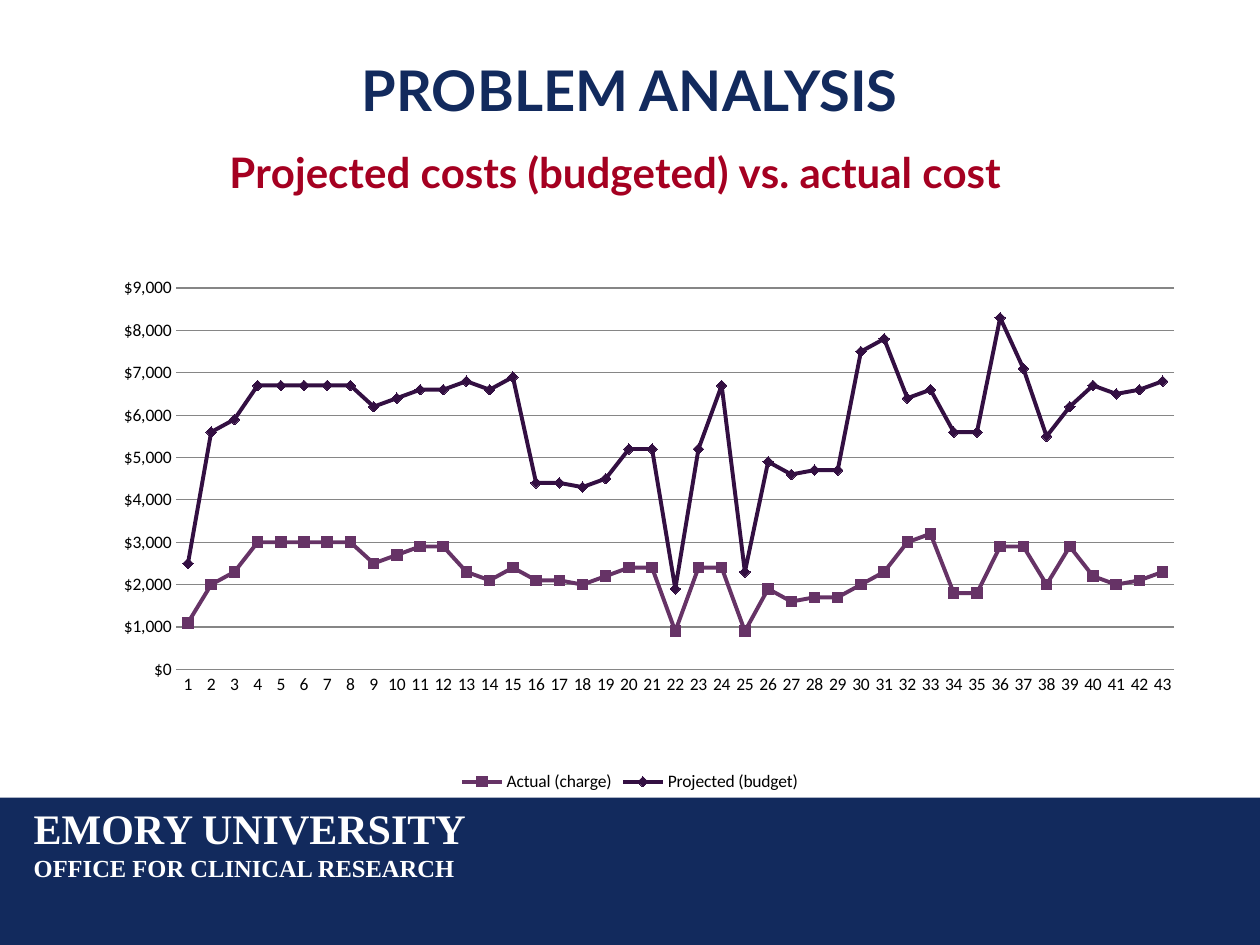
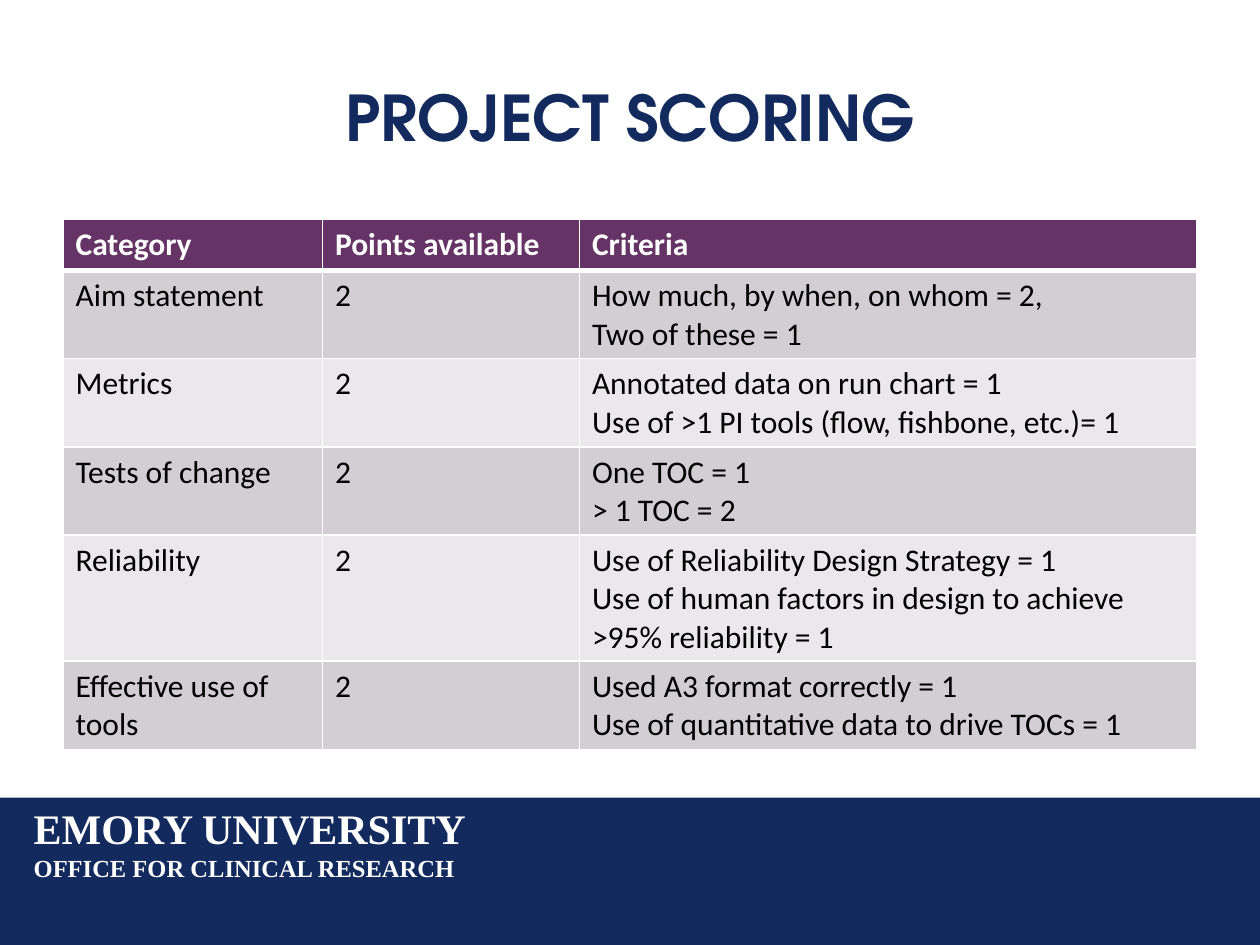
import dataclasses

import lxml.etree
import pptx
import pptx.chart.data
import pptx.dml.color
import pptx.enum.chart
import pptx.enum.shapes
import pptx.enum.text
import pptx.oxml
import pptx.oxml.ns
import pptx.util

Cm = pptx.util.Cm
Pt = pptx.util.Pt
RGB = pptx.dml.color.RGBColor.from_string
qn = pptx.oxml.ns.qn


@dataclasses.dataclass(frozen=True)
class Theme:
    navy: str = "122A5D"
    crimson: str = "A50021"
    plum: str = "663366"
    aubergine: str = "330F42"
    grid: str = "868686"
    white: str = "FFFFFF"
    black: str = "000000"
    bands: tuple = ("D3CED3", "EAE8EA")
    heading_font: str = "Lato"
    scoring_font: str = "TeX Gyre Adventor"
    body_font: str = "Calibri"
    footer_font: str = "Times New Roman"
    analysis_size: int = 32
    scoring_size: int = 36
    subtitle_size: int = 24
    office_sizes: tuple = (24, 14)
    table_size: int = 18
    chart_size: int = 10


theme = Theme()


def write(frame, lines, font, sizes, color, bold=False, align=None):
    frame.word_wrap = True
    for index, (line, size) in enumerate(zip(lines, sizes)):
        paragraph = frame.paragraphs[0] if index == 0 else frame.add_paragraph()
        paragraph.alignment = align
        run = paragraph.add_run()
        run.text = line
        run.font.name = font
        run.font.size = Pt(size)
        run.font.bold = bold
        run.font.color.rgb = RGB(color)


def place(parent, position, **fractions):
    for old in parent.findall(qn("c:layout")):
        parent.remove(old)
    layout = lxml.etree.Element(qn("c:layout"))
    manual = lxml.etree.SubElement(layout, qn("c:manualLayout"))
    if "w" in fractions:
        lxml.etree.SubElement(manual, qn("c:layoutTarget")).set("val", "inner")
    for side in ("x", "y"):
        lxml.etree.SubElement(manual, qn(f"c:{side}Mode")).set("val", "edge")
    for side, fraction in fractions.items():
        lxml.etree.SubElement(manual, qn(f"c:{side}")).set("val", str(fraction))
    parent.insert(position, layout)


deck = pptx.Presentation()
deck.slide_width, deck.slide_height = Cm(25.4), Cm(19.05)
margin, content_width = Cm(1.27), Cm(22.86)
band_top = Cm(16.08)

headings = [
    ("PROBLEM ANALYSIS", theme.heading_font, theme.analysis_size, Cm(2.08)),
    ("PROJECT SCORING", theme.scoring_font, theme.scoring_size, Cm(3.18)),
]
for heading, heading_font, heading_size, heading_height in headings:
    slide = deck.slides.add_slide(deck.slide_layouts[6])
    band = slide.shapes.add_shape(
        pptx.enum.shapes.MSO_SHAPE.RECTANGLE,
        0, band_top, deck.slide_width, deck.slide_height - band_top)
    band.shadow.inherit = False
    band.fill.solid()
    band.fill.fore_color.rgb = RGB(theme.navy)
    band.line.fill.background()

    title = slide.shapes.add_textbox(margin, Cm(0.76), content_width, heading_height)
    title.text_frame.vertical_anchor = pptx.enum.text.MSO_ANCHOR.MIDDLE
    write(title.text_frame, [heading], heading_font, [heading_size], theme.navy,
          True, pptx.enum.text.PP_ALIGN.CENTER)

    office = slide.shapes.add_textbox(Cm(0.43), Cm(16.05), Cm(10.03), Cm(1.88))
    office.text_frame.vertical_anchor = pptx.enum.text.MSO_ANCHOR.MIDDLE
    write(office.text_frame, ["EMORY UNIVERSITY", "OFFICE FOR CLINICAL RESEARCH"],
          theme.footer_font, theme.office_sizes, theme.white, True)

analysis, scoring = deck.slides

actual = [
    1100, 2000, 2300, 3000, 3000, 3000, 3000, 3000, 2500, 2700, 2900,
    2900, 2300, 2100, 2400, 2100, 2100, 2000, 2200, 2400, 2400, 900,
    2400, 2400, 900, 1900, 1600, 1700, 1700, 2000, 2300, 3000, 3200,
    1800, 1800, 2900, 2900, 2000, 2900, 2200, 2000, 2100, 2300,
]
projected = [
    1400, 3600, 3600, 3700, 3700, 3700, 3700, 3700, 3700, 3700, 3700,
    3700, 4500, 4500, 4500, 2300, 2300, 2300, 2300, 2800, 2800, 1000,
    2800, 4300, 1400, 3000, 3000, 3000, 3000, 5500, 5500, 3400, 3400,
    3800, 3800, 5400, 4200, 3500, 3300, 4500, 4500, 4500, 4500,
]
costs = pptx.chart.data.CategoryChartData()
costs.categories = [str(number) for number in range(1, len(actual) + 1)]
costs.add_series("Actual (charge)", actual)
costs.add_series("Projected (budget)", projected)
cost_chart = analysis.shapes.add_chart(
    pptx.enum.chart.XL_CHART_TYPE.LINE_MARKERS_STACKED,
    margin, Cm(2.57), content_width, Cm(13.49), costs).chart
cost_chart.font.name = theme.body_font
cost_chart.font.size = Pt(theme.chart_size)
cost_chart.font.color.rgb = RGB(theme.black)

cost_chart.has_title = True
write(cost_chart.chart_title.text_frame, ["Projected costs (budgeted) vs. actual cost"],
      theme.heading_font, [theme.subtitle_size], theme.crimson, True)
cost_chart.chart_title.include_in_layout = False
place(cost_chart.chart_title._element, 1, x=0.14, y=0.01)
place(cost_chart._chartSpace.chart.plotArea, 0, x=0.1, y=0.24, w=0.88, h=0.57)

cost_chart.has_legend = True
cost_chart.legend.position = pptx.enum.chart.XL_LEGEND_POSITION.BOTTOM
cost_chart.legend.include_in_layout = False

for axis in (cost_chart.category_axis, cost_chart.value_axis):
    axis.major_tick_mark = pptx.enum.chart.XL_TICK_MARK.NONE
    axis.minor_tick_mark = pptx.enum.chart.XL_TICK_MARK.NONE
cost_chart.category_axis.format.line.color.rgb = RGB(theme.grid)
dollars = cost_chart.value_axis
dollars.minimum_scale, dollars.maximum_scale, dollars.major_unit = 0, 9000, 1000
dollars.format.line.fill.background()
dollars.has_major_gridlines = True
dollars.major_gridlines.format.line.color.rgb = RGB(theme.grid)
dollars.tick_labels.number_format = '"$"#,##0'
dollars.tick_labels.number_format_is_linked = False

markers = pptx.enum.chart.XL_MARKER_STYLE
series_looks = [(theme.plum, markers.SQUARE), (theme.aubergine, markers.DIAMOND)]
for cost, (color, marker) in zip(cost_chart.plots[0].series, series_looks):
    cost.smooth = False
    cost.format.line.color.rgb = RGB(color)
    cost.format.line.width = Pt(2.25)
    cost.marker.style = marker
    cost.marker.size = 6
    cost.marker.format.fill.solid()
    cost.marker.format.fill.fore_color.rgb = RGB(color)
    cost.marker.format.line.color.rgb = RGB(color)
cost_chart.plots[0].vary_by_categories = False

criteria = [
    ("Category", "Points available", ["Criteria"]),
    ("Aim statement", "2", ["How much, by when, on whom = 2,", "Two of these = 1"]),
    ("Metrics", "2", ["Annotated data on run chart = 1",
                      "Use of >1 PI tools (flow, fishbone, etc.)= 1"]),
    ("Tests of change", "2", ["One TOC = 1", "> 1 TOC = 2"]),
    ("Reliability", "2", ["Use of Reliability Design Strategy = 1",
                          "Use of human factors in design to achieve >95% reliability = 1"]),
    ("Effective use of tools", "2", ["Used A3 format correctly = 1",
                                     "Use of quantitative data to drive TOCs = 1"]),
]
row_height = Cm(1.03)
score_table = scoring.shapes.add_table(
    len(criteria), 3, margin, Cm(4.42), content_width, row_height * len(criteria)).table
for column, width in zip(score_table.columns, (5.23, 5.18, 12.45)):
    column.width = Cm(width)

for row_index, (category, points, rules) in enumerate(criteria):
    is_header = row_index == 0
    score_table.rows[row_index].height = row_height
    row_fill = theme.plum if is_header else theme.bands[(row_index - 1) % 2]
    for column_index, lines in enumerate(([category], [points], rules)):
        cell = score_table.cell(row_index, column_index)
        write(cell.text_frame, lines, theme.body_font, [theme.table_size] * len(lines),
              theme.white if is_header else theme.black, is_header)
        properties = cell._tc.get_or_add_tcPr()
        for side in "LRTB":
            thick = (is_header and side == "B") or (row_index == 1 and side == "T")
            border = lxml.etree.SubElement(properties, qn(f"a:ln{side}"))
            border.set("w", str(Pt(3 if thick else 1)))
            border_fill = lxml.etree.SubElement(border, qn("a:solidFill"))
            lxml.etree.SubElement(border_fill, qn("a:srgbClr")).set("val", theme.white)
        cell.fill.solid()
        cell.fill.fore_color.rgb = RGB(row_fill)

deck.save("out.pptx")
